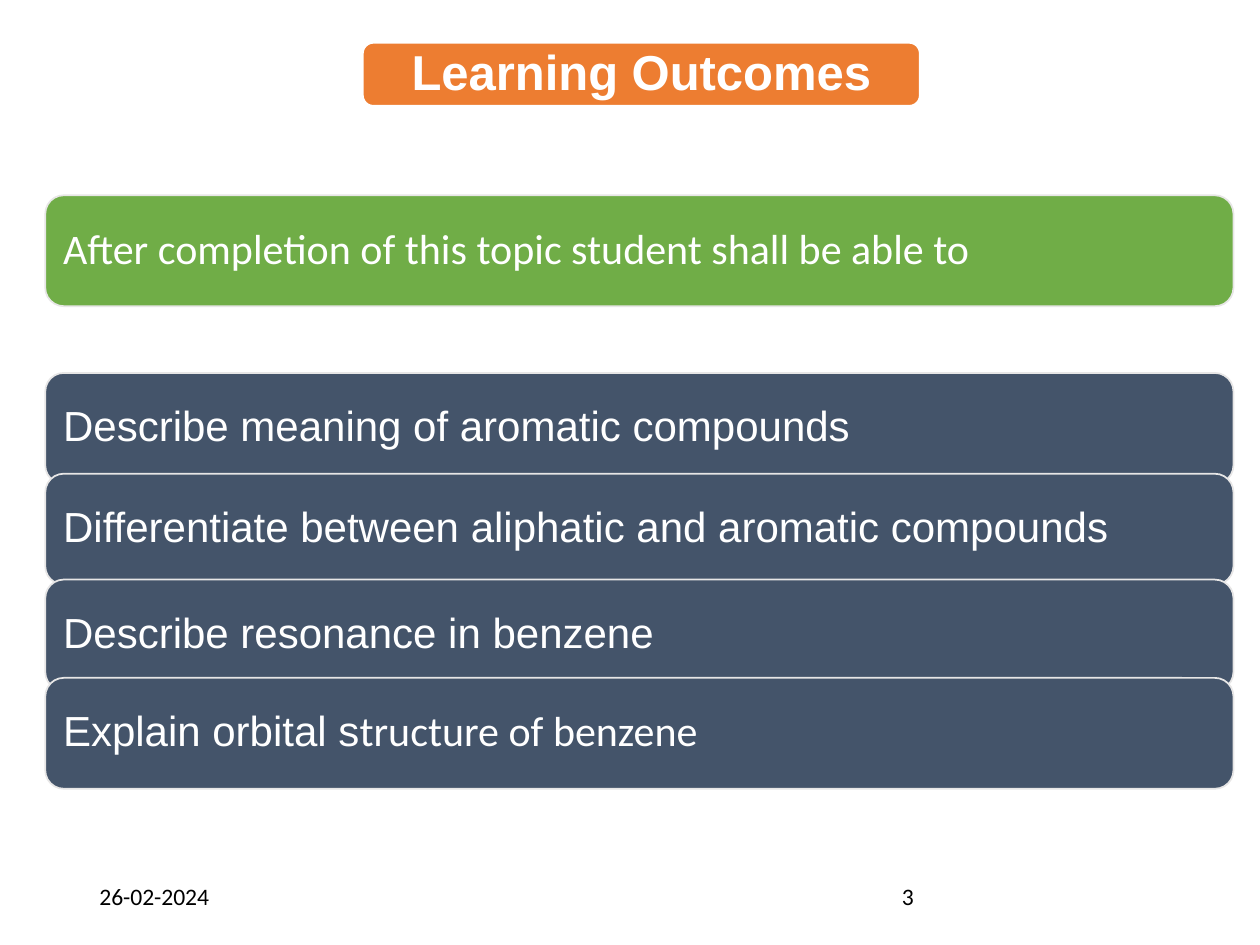
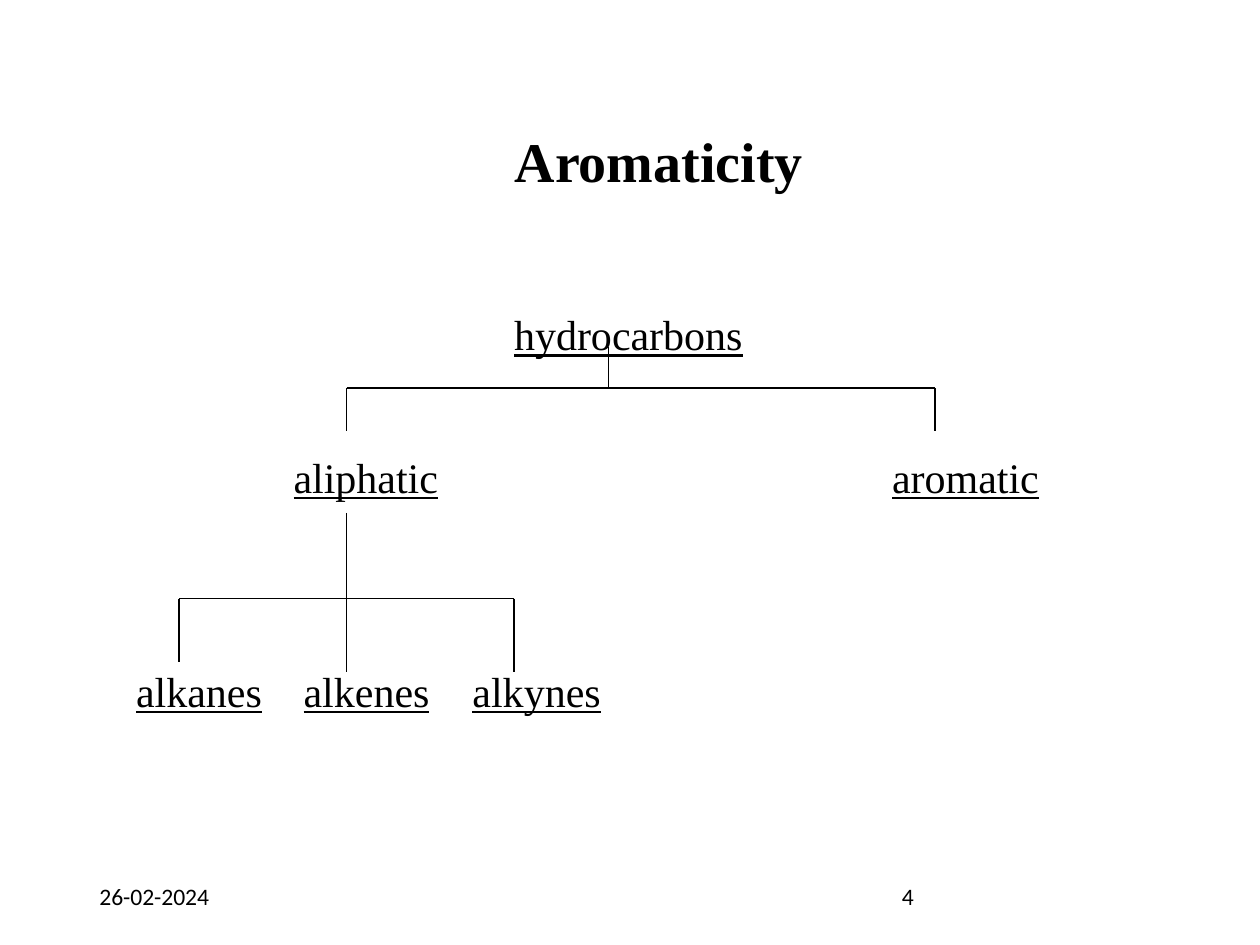
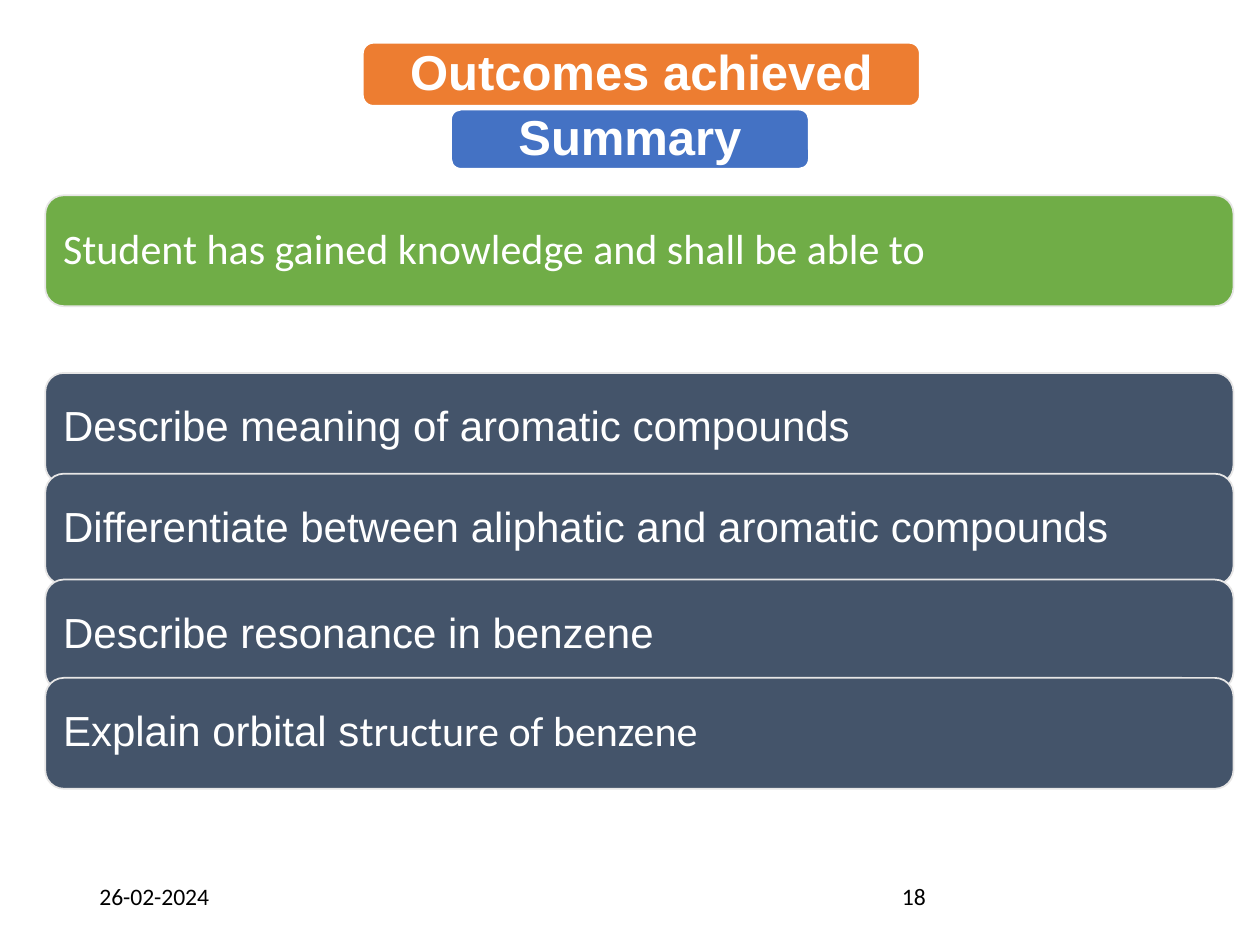
from pptx import Presentation, util as u
from pptx.dml.color import RGBColor
from pptx.enum import shapes, text
from pptx.oxml import parse_xml
from pptx.oxml.ns import nsdecls

WHITE = RGBColor(0xFF, 0xFF, 0xFF)
BLACK = RGBColor(0, 0, 0)
ORANGE = RGBColor(0xED, 0x7D, 0x31)
BLUE = RGBColor(0x44, 0x72, 0xC4)
GREEN = RGBColor(0x70, 0xAD, 0x47)
SLATE = RGBColor(0x44, 0x54, 0x6A)
PALE = RGBColor(0xE7, 0xE6, 0xE6)
ARIAL, CALIBRI, TIMES = "Arial", "Calibri", "Times New Roman"
LEFT, CENTER, JUSTIFY = text.PP_ALIGN.LEFT, text.PP_ALIGN.CENTER, text.PP_ALIGN.JUSTIFY
MIDDLE, TOP = text.MSO_ANCHOR.MIDDLE, text.MSO_ANCHOR.TOP

DATE = "26-02-2024"
OUTCOMES = [
    (2.96, [("Describe meaning of aromatic compounds", ARIAL)]),
    (3.76, [("Differentiate between aliphatic and aromatic compounds", ARIAL)]),
    (4.6, [("Describe resonance in benzene", ARIAL)]),
    (5.38, [("Explain orbital s", ARIAL), ("tructure of benzene", CALIBRI)]),
]
OUTCOME_SLIDES = {
    "3": ("Learning Outcomes", None, "After completion of this topic student shall be able to"),
    "18": ("Outcomes achieved", "Summary", "Student has gained knowledge and shall be able to"),
}
TREE_TITLE = "Aromaticity"
TREE_LEVELS = [
    (2.45, [(4.08, "hydrocarbons")]),
    (3.58, [(2.33, "aliphatic"), (7.08, "aromatic")]),
    (5.28, [(1.08, "alkanes"), (2.41, "alkenes"), (3.75, "alkynes")]),
]
BRANCHES = [
    {"stem": (4.83, 2.75), "bus": 3.08, "drops": [(2.75, 3.42), (7.42, 3.42)]},
    {"stem": (2.75, 4.07), "bus": 4.75, "drops": [(1.42, 5.25), (2.75, 5.33), (4.08, 5.33)]},
]
BANNER = (2.88, 0.34, 4.42, 0.5)
SUMMARY_BANNER = (3.58, 0.87, 2.84, 0.47)
BAR_LEFT, BAR_WIDTH, BAR_HEIGHT = 0.36, 9.43, 0.88
INTRO_TOP = 1.55


def inches(values):
    return [u.Inches(value) for value in values]


def write(holder, runs, size, color, align=LEFT, anchor=TOP, inset=(0.1, 0.05),
          wrap=True, spacing=1.0, bold=False, underline=False):
    frame = holder.text_frame
    frame.auto_size = text.MSO_AUTO_SIZE.NONE
    frame.word_wrap = wrap
    frame.vertical_anchor = anchor
    frame.margin_left = frame.margin_right = u.Inches(inset[0])
    frame.margin_top = frame.margin_bottom = u.Inches(inset[1])
    paragraph = frame.paragraphs[0]
    paragraph.alignment = align
    paragraph.line_spacing = spacing
    for words, face in runs:
        run = paragraph.add_run()
        run.text = words
        font = run.font
        font.name, font.size, font.bold, font.underline = face, u.Pt(size), bold, underline
        font.color.rgb = color


def add_title(slide, place, words, **style):
    title = slide.shapes.title
    title.left, title.top, title.width, title.height = inches(place)
    write(title, words, align=CENTER, bold=True, **style)
    return title


def add_label(slide, place, words, face, size, **style):
    write(slide.shapes.add_textbox(*inches(place)), [(words, face)], size, BLACK, **style)


def add_rounded(slide, place, fill, line):
    box = slide.shapes.add_shape(shapes.MSO_SHAPE.ROUNDED_RECTANGLE, *inches(place))
    box.shadow.inherit = False
    box.fill.solid()
    box.fill.fore_color.rgb = fill
    box.line.color.rgb = line
    box.line.width = u.Pt(1)
    return box


def add_bar(slide, top, fill, runs, align=LEFT):
    bar = add_rounded(slide, (BAR_LEFT, top, BAR_WIDTH, BAR_HEIGHT), fill, PALE)
    write(bar, runs, 24, WHITE, align, MIDDLE, (0.1, 0.1), spacing=0.9)


def add_line(slide, *ends):
    line = slide.shapes.add_connector(shapes.MSO_CONNECTOR.STRAIGHT, *inches(ends))
    line.line.color.rgb = BLACK
    line.line.width = u.Pt(0.75)
    line._element.spPr.append(parse_xml(f"<a:effectLst {nsdecls('a')}/>"))


def add_slide(deck, number):
    slide = deck.slides.add_slide(deck.slide_layouts[5])
    for left, words in ((0.69, DATE), (7.06, number)):
        add_label(slide, (left, 6.95, 2.25, 0.4), words, CALIBRI, 13.5)
    return slide


def build_outcomes(deck, number):
    heading, summary, intro = OUTCOME_SLIDES[number]
    slide = add_slide(deck, number)
    banner_style = dict(size=28, color=WHITE, anchor=MIDDLE, inset=(0.12, 0.12), spacing=0.9)
    banner = add_rounded(slide, BANNER, ORANGE, WHITE)
    title = add_title(slide, BANNER, [(heading, ARIAL)], **banner_style)
    title._element.addprevious(banner._element)
    add_bar(slide, INTRO_TOP, GREEN, [(intro, CALIBRI)], JUSTIFY)
    for top, runs in OUTCOMES:
        add_bar(slide, top, SLATE, runs)
    if summary:
        summary_banner = add_rounded(slide, SUMMARY_BANNER, BLUE, WHITE)
        write(summary_banner, [(summary, ARIAL)], align=CENTER, bold=True, **banner_style)


def build_tree(deck, number):
    slide = add_slide(deck, number)
    add_title(slide, (0.98, 0.95, 8.5, 0.6), [(TREE_TITLE, TIMES)], size=32, color=BLACK)
    for top, nodes in TREE_LEVELS:
        for left, name in nodes:
            add_label(slide, (left, top, 2, 0.4), name, TIMES, 24,
                      inset=(0, 0), wrap=False, underline=True)
    for branch in BRANCHES:
        (stem, top), bus, drops = branch["stem"], branch["bus"], branch["drops"]
        add_line(slide, stem, top, stem, bus)
        add_line(slide, drops[0][0], bus, drops[-1][0], bus)
        for x, bottom in drops:
            add_line(slide, x, bus, x, bottom)


def main():
    deck = Presentation()
    deck.slide_width, deck.slide_height = inches((10, 7.5))
    build_outcomes(deck, "3")
    build_tree(deck, "4")
    build_outcomes(deck, "18")
    deck.save("out.pptx")


if __name__ == "__main__":
    main()
